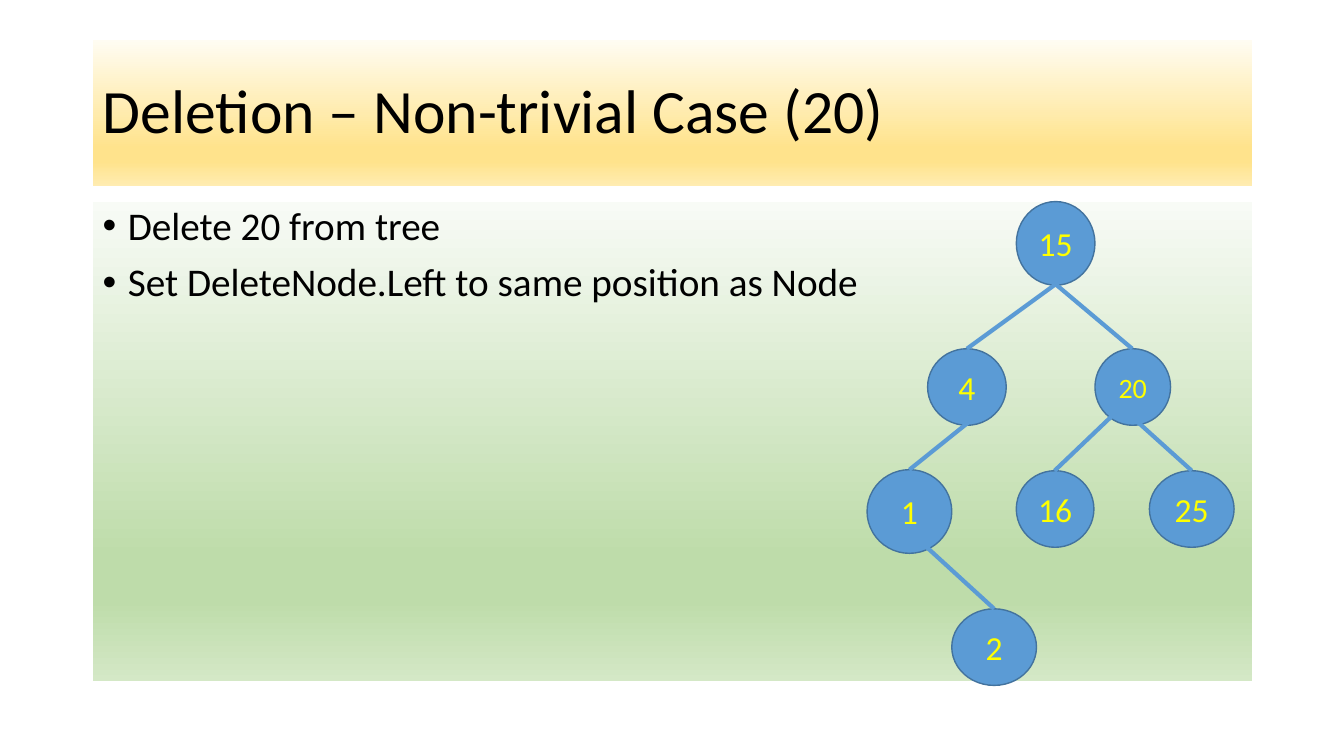
from copy import deepcopy

from pptx import Presentation
from pptx import util as u
from pptx.dml.color import RGBColor
from pptx.enum import shapes, text
from pptx.oxml.ns import qn
from lxml import etree

PX = 9144
BLUE = "5B9BD5"
GOLD = ["FFFCF2", "FFE38C", "FFE38C", "FFECB2"]
GREEN = ["F8FBF6", "BEDCAA", "BEDCAA", "D4E8C6"]
STOPS = [0, 0.74, 0.83, 1]
NODES = {
    "15": (1008, 200, 78, 83),
    "4": (920, 346, 78, 76),
    "20": (1086, 346, 75, 76),
    "1": (860, 466, 84, 83),
    "16": (1008, 467, 77, 76),
    "25": (1140, 467, 84, 76),
    "2": (944, 604, 84, 76),
}
EDGES = [
    (1047, 282, "4"),
    (1047, 282, "20"),
    (973, 409, "1"),
    (1113, 403, "16"),
    (1111, 403, "25"),
    (916, 540, "2"),
]


def px(*nums):
    return [u.Emu(n * PX) for n in nums]


def color(code):
    return RGBColor.from_string(code)


def style(para, size, code):
    for run in para.runs:
        run.font.name = "Calibri"
        run.font.size = u.Pt(size)
        run.font.color.rgb = color(code)


def place(shape, *box):
    shape.left, shape.top, shape.width, shape.height = px(*box)


def shade(shape, codes):
    shape.fill.gradient()
    shape.fill.gradient_angle = 270
    stops = shape._element.spPr.find(".//" + qn("a:gsLst"))
    while len(stops) < len(codes):
        stops.append(deepcopy(stops[0]))
    for stop, code, pos in zip(shape.fill.gradient_stops, codes, STOPS):
        stop.color.rgb = color(code)
        stop.position = pos


def add_title(slide, words):
    title = slide.shapes.title
    place(title, 92, 40, 1150, 145)
    shade(title, GOLD)
    frame = title.text_frame
    frame.text = words
    frame.auto_size = text.MSO_AUTO_SIZE.NONE
    frame.vertical_anchor = text.MSO_ANCHOR.MIDDLE
    para = frame.paragraphs[0]
    para.alignment = text.PP_ALIGN.LEFT
    para.line_spacing = 0.9
    style(para, 44, "000000")


def add_list(slide, items):
    box = slide.shapes.add_textbox(*px(92, 200, 1150, 476))
    shade(box, GREEN)
    frame = box.text_frame
    frame.word_wrap = True
    frame.text = "\n".join(items)
    for para in frame.paragraphs:
        para.line_spacing = 0.9
        para.space_before = u.Pt(10)
        style(para, 28, "000000")
        props = para._p.get_or_add_pPr()
        props.set("marL", str(25 * PX))
        props.set("indent", str(-25 * PX))
        etree.SubElement(props, qn("a:buFont")).set("typeface", "Arial")
        etree.SubElement(props, qn("a:buChar")).set("char", "•")


def add_node(slide, label, box):
    node = slide.shapes.add_shape(shapes.MSO_SHAPE.OVAL, *px(*box))
    node.shadow.inherit = False
    node.fill.solid()
    node.fill.fore_color.rgb = color(BLUE)
    node.line.color.rgb = color("43739E")
    node.line.width = u.Pt(1)
    frame = node.text_frame
    frame.text = label
    frame.vertical_anchor = text.MSO_ANCHOR.MIDDLE
    para = frame.paragraphs[0]
    para.alignment = text.PP_ALIGN.CENTER
    style(para, 20 if label == "20" else 24, "FFFF00")


def add_edge(slide, x, y, child):
    left, top, width, _ = NODES[child]
    ends = px(x, y, left + width // 2, top)
    edge = slide.shapes.add_connector(shapes.MSO_CONNECTOR.STRAIGHT, *ends)
    edge.line.color.rgb = color(BLUE)
    edge.line.width = u.Pt(3)
    etree.SubElement(edge._element.spPr, qn("a:effectLst"))


def main():
    deck = Presentation()
    deck.slide_width, deck.slide_height = px(1333, 750)
    slide = deck.slides.add_slide(deck.slide_layouts[5])
    add_title(slide, "Deletion – Non-trivial Case (20)")
    add_list(slide, [
        "Delete 20 from tree",
        "Set DeleteNode.Left to same position as Node",
    ])
    for label, box in NODES.items():
        add_node(slide, label, box)
    for edge in EDGES:
        add_edge(slide, *edge)
    deck.save("out.pptx")


if __name__ == "__main__":
    main()
